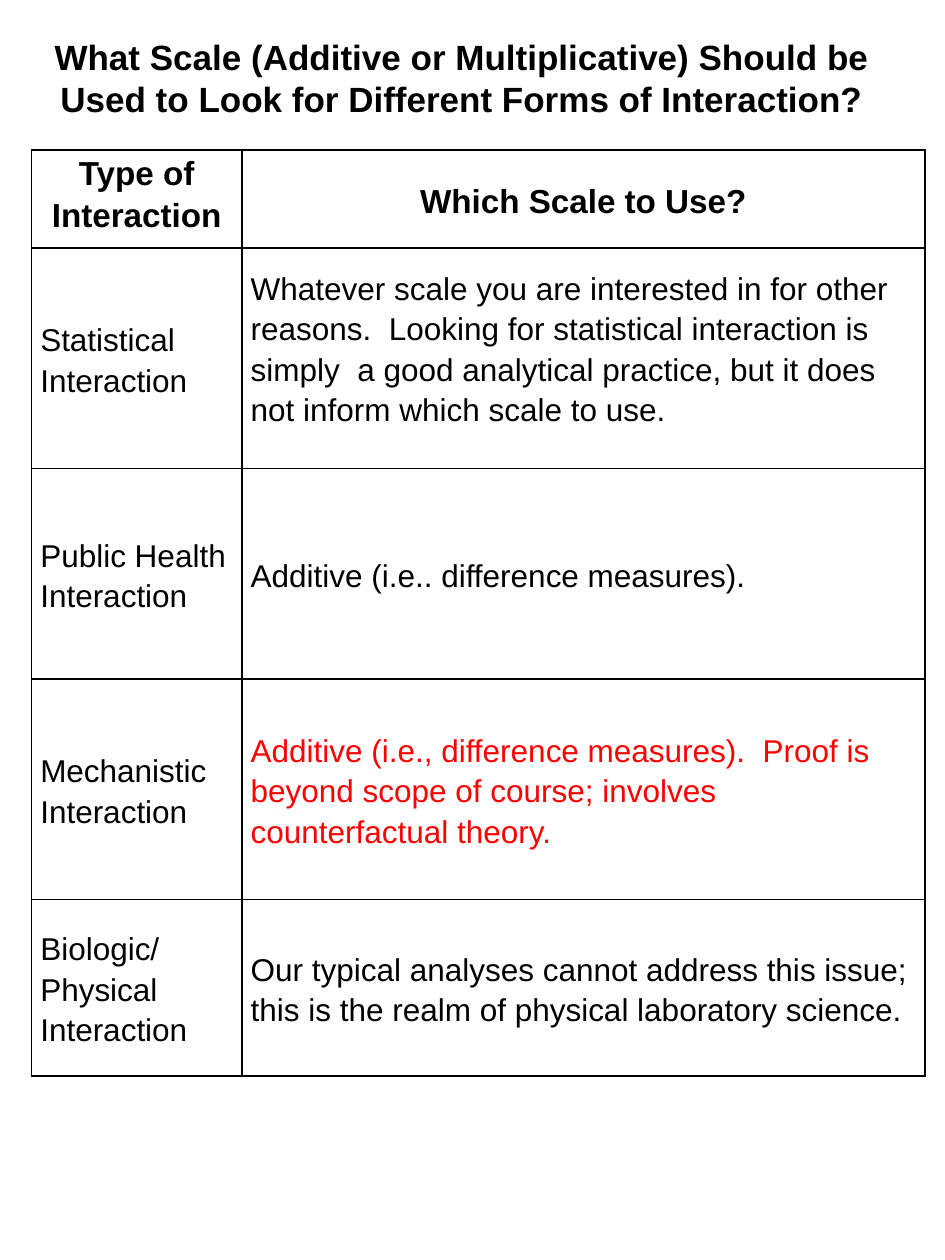
import pptx
import pptx.dml.color
import pptx.enum.text
import pptx.oxml
import pptx.oxml.ns
import pptx.util

Inches = pptx.util.Inches
Align = pptx.enum.text.PP_ALIGN
Anchor = pptx.enum.text.MSO_ANCHOR

BLACK, RED = "000000", "FF0000"
COLUMN_WIDTHS = [1.67, 5.42]
ROW_HEIGHTS = [0.78, 1.75, 1.67, 1.75, 1.4]
HEADINGS = ["Type of Interaction", "Which Scale to Use?"]
INTERACTIONS = [
    ("Statistical Interaction",
     "Whatever scale you are interested in for other reasons.  Looking for "
     "statistical interaction is simply  a good analytical practice, but it "
     "does not inform which scale to use.", BLACK),
    ("Public Health Interaction", "Additive (i.e.. difference measures).", BLACK),
    ("Mechanistic Interaction",
     "Additive (i.e., difference measures).  Proof is beyond scope of course; "
     "involves counterfactual theory.", RED),
    ("Biologic/ Physical Interaction",
     "Our typical analyses cannot address this issue;  this is the realm of "
     "physical laboratory science.", BLACK),
]


def rgb(color):
    return pptx.dml.color.RGBColor.from_string(color)


def write(frame, text, size=18, bold=False, color=BLACK, align=Align.LEFT, spacing=1.0):
    para = frame.paragraphs[0]
    para.alignment = align
    para.line_spacing = spacing
    span = para.add_run()
    span.text = text
    span.font.name = "Arial"
    span.font.size = pptx.util.Pt(size)
    span.font.bold = bold
    span.font.color.rgb = rgb(color)


def add_title(page, text):
    box = page.shapes.add_textbox(Inches(0), Inches(0.42), Inches(7.33), Inches(0.58))
    box.text_frame.word_wrap = True
    box.text_frame.vertical_anchor = Anchor.BOTTOM
    write(box.text_frame, text, size=20, bold=True, align=Align.CENTER)


def add_borders(cell, color=BLACK, width=1):
    properties = cell._tc.get_or_add_tcPr()
    for position, side in enumerate(("lnL", "lnR", "lnT", "lnB")):
        line = pptx.oxml.parse_xml(
            f'<a:{side} {pptx.oxml.ns.nsdecls("a")} w="{pptx.util.Pt(width)}">'
            f'<a:solidFill><a:srgbClr val="{color}"/></a:solidFill></a:{side}>')
        properties.insert(position, line)


def fill_cell(cell, text, anchor=Anchor.MIDDLE, bottom=0, **text_format):
    cell.fill.background()
    add_borders(cell)
    cell.margin_left = cell.margin_right = Inches(0.07)
    cell.margin_top = Inches(0)
    cell.margin_bottom = Inches(bottom)
    cell.vertical_anchor = anchor
    write(cell.text_frame, text, spacing=1.15, **text_format)


def add_scale_table(page):
    table = page.shapes.add_table(
        len(ROW_HEIGHTS), len(COLUMN_WIDTHS), Inches(0.25), Inches(1.19),
        Inches(sum(COLUMN_WIDTHS)), Inches(sum(ROW_HEIGHTS))).table
    table.first_row = table.horz_banding = False
    for column, width in zip(table.columns, COLUMN_WIDTHS):
        column.width = Inches(width)
    for row, height in zip(table.rows, ROW_HEIGHTS):
        row.height = Inches(height)

    for column, (heading, anchor) in enumerate(zip(HEADINGS, (Anchor.TOP, Anchor.MIDDLE))):
        fill_cell(table.cell(0, column), heading, anchor=anchor,
                  size=19, bold=True, align=Align.CENTER)
    for row, (interaction, scale, color) in enumerate(INTERACTIONS, start=1):
        fill_cell(table.cell(row, 0), interaction)
        # The first answer sits one line above the bottom of its cell.
        placing = {"anchor": Anchor.BOTTOM, "bottom": 0.32} if row == 1 else {}
        fill_cell(table.cell(row, 1), scale, color=color, **placing)


def main():
    deck = pptx.Presentation()
    deck.slide_width, deck.slide_height = Inches(7.5), Inches(10)
    page = deck.slides.add_slide(deck.slide_layouts[6])
    add_title(page, "What Scale (Additive or Multiplicative) Should be "
                    "Used to Look for Different Forms of Interaction?")
    add_scale_table(page)
    deck.save("out.pptx")


if __name__ == "__main__":
    main()
